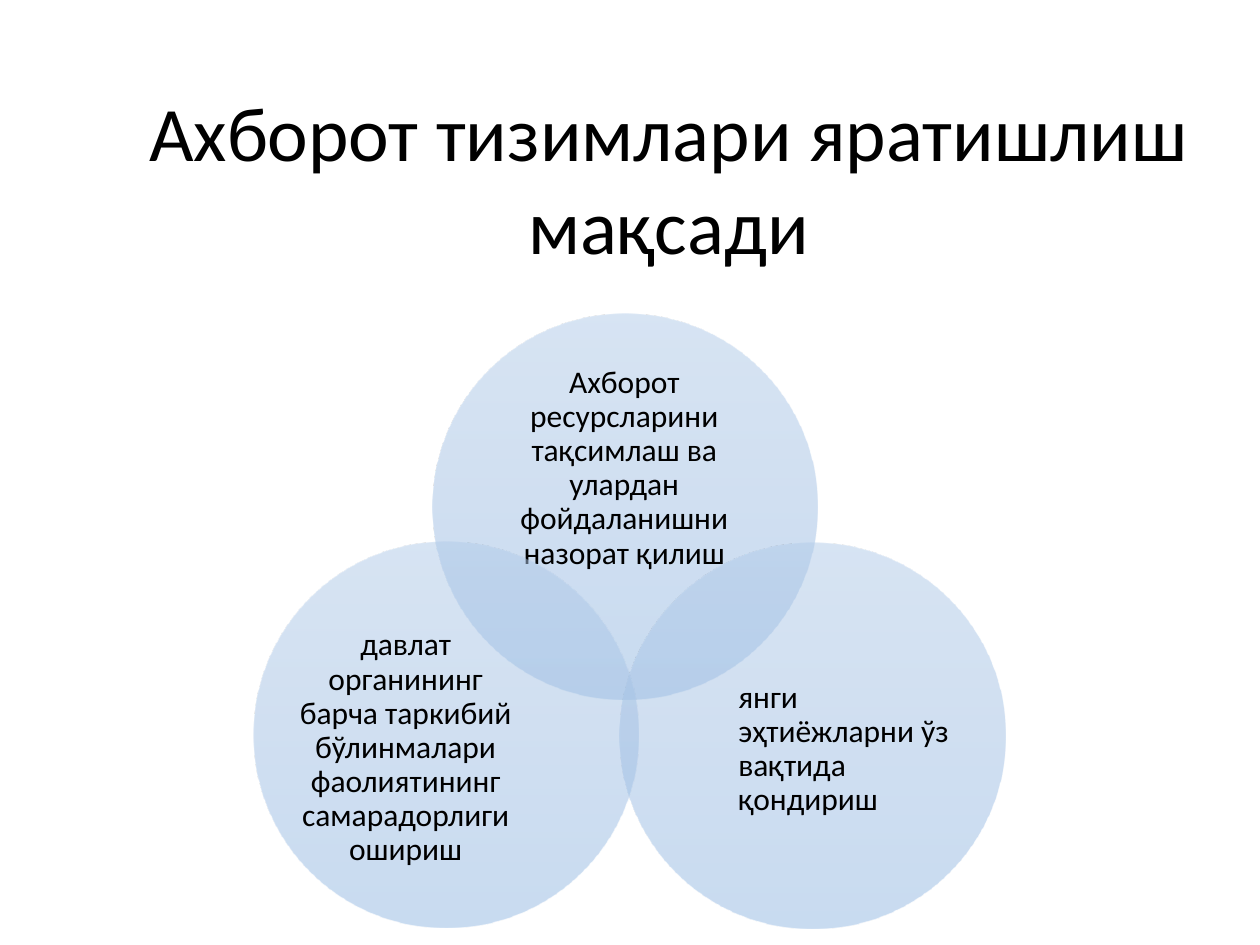
import pptx
import pptx.util
import pptx.dml.color
import pptx.enum.shapes
import pptx.enum.text
import pptx.oxml
import pptx.oxml.ns

COLORS = {"text": "000000", "top": "B1CBE9", "middle": "A3C1E5", "bottom": "93B9E4"}
COLUMNS, ROWS = 100, 75
ALIGN = pptx.enum.text.PP_ALIGN


def write_text(frame, text, size=18, font="Calibri", color="text", align=ALIGN.CENTER,
               line_spacing=None, space_after=None):
    """Fill a text frame with one formatted paragraph."""
    para = frame.paragraphs[0]
    para.alignment = align
    if line_spacing:
        para.line_spacing = line_spacing
    if space_after:
        para.space_after = pptx.util.Pt(space_after)
    span = para.add_run()
    span.text = text
    span.font.size = pptx.util.Pt(size)
    span.font.name = font
    span.font.color.rgb = pptx.dml.color.RGBColor.from_string(COLORS[color])


class SlideBuilder:
    """Holds the style and the current slide; lengths are grid columns and rows."""

    opacity = 50
    stops = ((0, "top"), (50, "middle"), (100, "bottom"))

    def __init__(self, deck):
        self.column = deck.slide_width / COLUMNS
        self.row = deck.slide_height / ROWS
        self.page = deck.slides.add_slide(deck.slide_layouts[6])

    def place(self, left, top, width, height):
        return (round(left * self.column), round(top * self.row),
                round(width * self.column), round(height * self.row))

    def text(self, area, text, inset=True, **style):
        box = self.page.shapes.add_textbox(*self.place(*area))
        frame = box.text_frame
        frame.word_wrap = True
        frame.vertical_anchor = pptx.enum.text.MSO_ANCHOR.MIDDLE
        if not inset:
            frame.margin_left = frame.margin_right = 0
            frame.margin_top = frame.margin_bottom = 0
        write_text(frame, text, **style)

    def circle(self, left, top, size):
        oval = self.page.shapes.add_shape(
            pptx.enum.shapes.MSO_SHAPE.OVAL, *self.place(left, top, size, size))
        oval.shadow.inherit = False
        oval.line.fill.background()
        oval.fill.gradient()
        oval.fill.gradient_angle = 270  # counter-clockwise: runs from top to bottom
        # Three translucent stops need XML
        stop_list = oval._element.spPr.find(".//" + pptx.oxml.ns.qn("a:gsLst"))
        for stop in list(stop_list):
            stop_list.remove(stop)
        for position, color in self.stops:
            stop_list.append(pptx.oxml.parse_xml(
                f'<a:gs {pptx.oxml.ns.nsdecls("a")} pos="{position * 1000}">'
                f'<a:srgbClr val="{COLORS[color]}">'
                f'<a:alpha val="{self.opacity * 1000}"/></a:srgbClr></a:gs>'))


def main():
    deck = pptx.Presentation()
    deck.slide_width = pptx.util.Inches(10)
    deck.slide_height = pptx.util.Inches(7.5)
    builder = SlideBuilder(deck)

    # Title
    builder.text((10.6, 6, 85, 16.1), "Ахборот тизимлари яратишлиш мақсади", size=44)

    # Venn diagram: circle corner, label area, label, alignment
    goals = (
        ((34.3, 24.9), (38.3, 30.3, 22.5, 13.8),
         "Ахборот ресурсларини тақсимлаш ва улардан фойдаланишни назорат қилиш",
         ALIGN.CENTER),
        ((49.2, 43.1), (58.6, 51, 18.4, 16.9),
         "янги эҳтиёжларни ўз вақтида қондириш", ALIGN.LEFT),
        ((20.1, 43), (23, 50.9, 18.4, 16.9),
         "давлат органининг барча таркибий бўлинмалари фаолиятининг самарадорлиги ошириш",
         ALIGN.CENTER),
    )
    for corner, area, label, align in goals:
        builder.circle(*corner, size=30.6)
        builder.text(area, label, inset=False, align=align,
                     line_spacing=0.9, space_after=6.3)

    deck.save("out.pptx")


if __name__ == "__main__":
    main()
